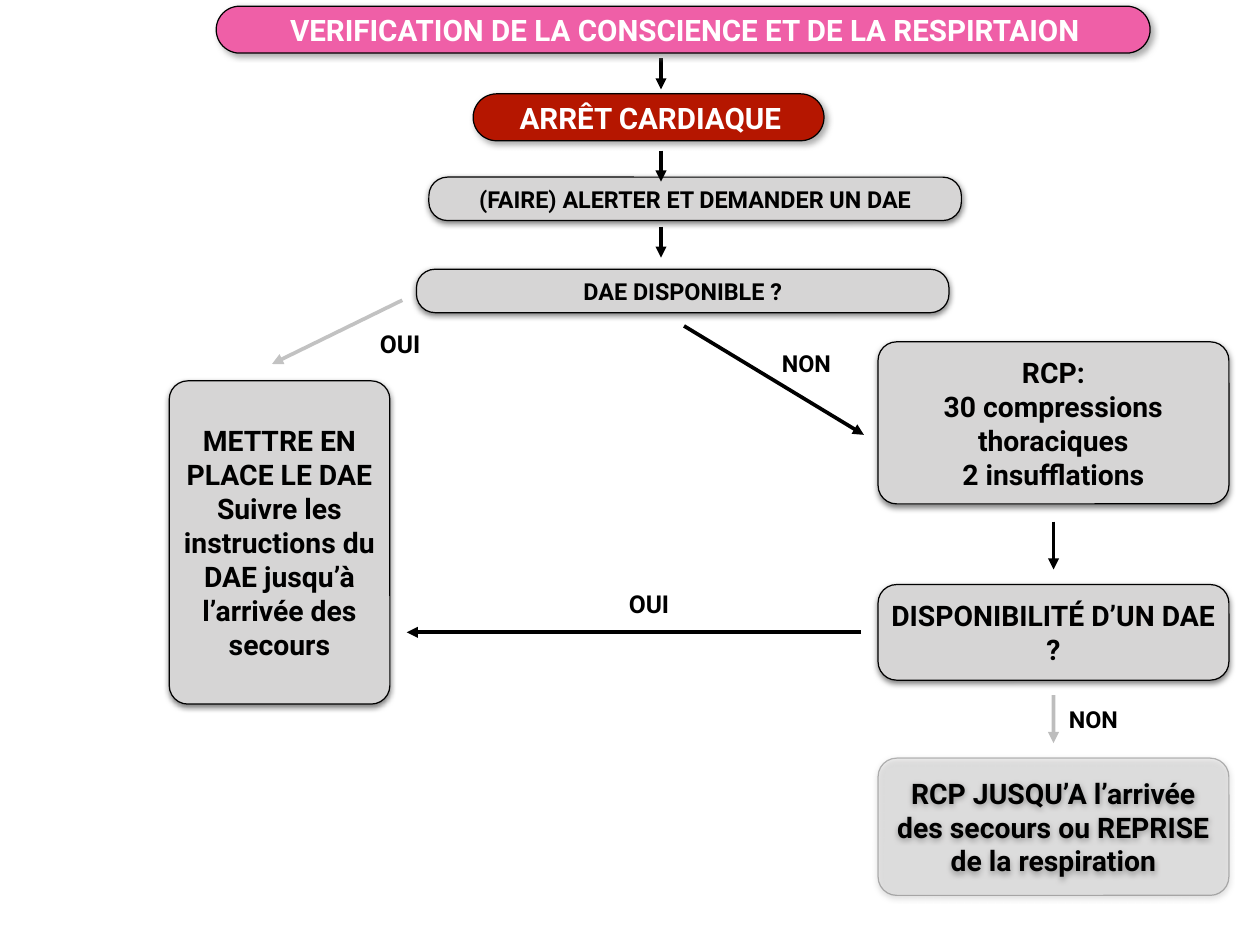
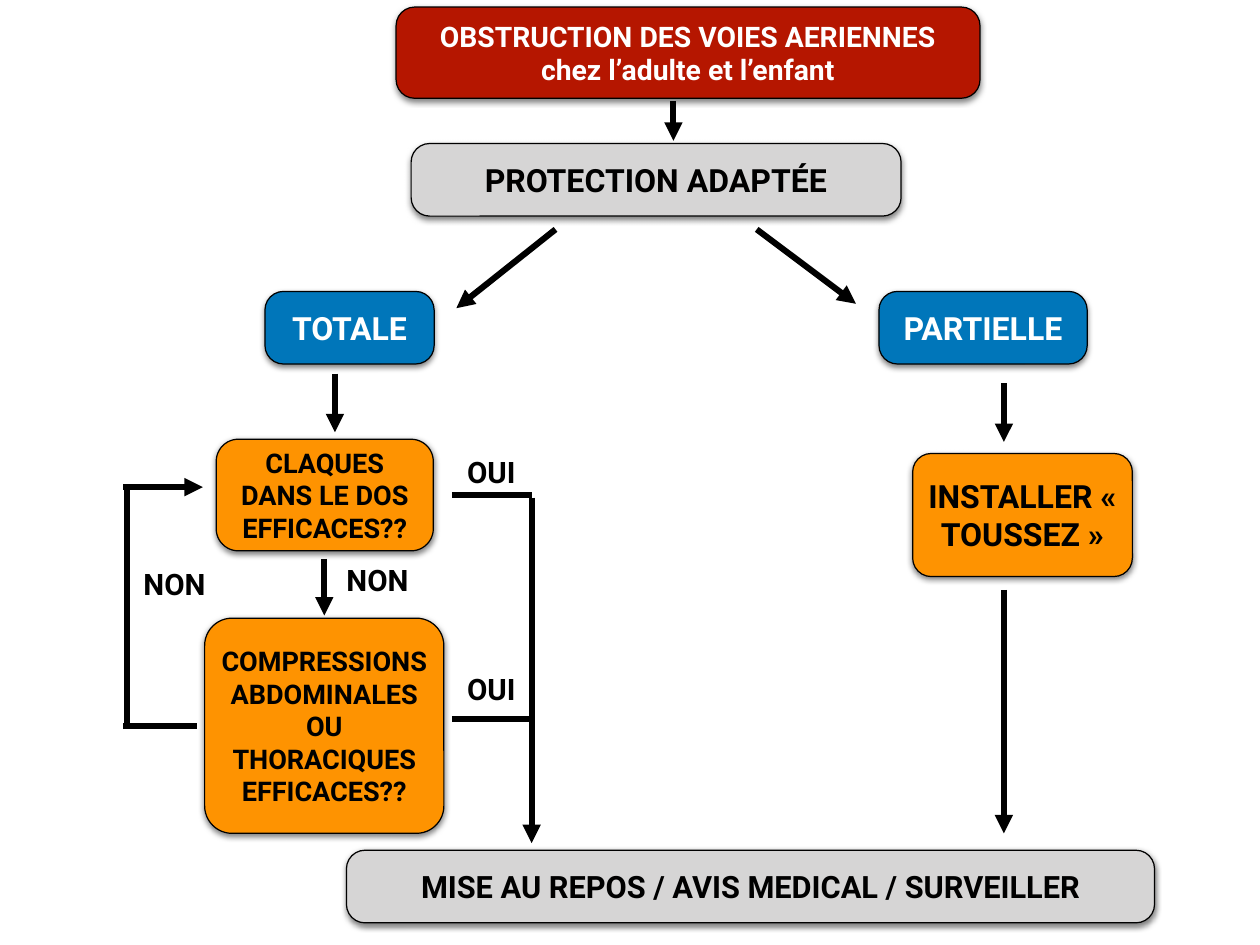
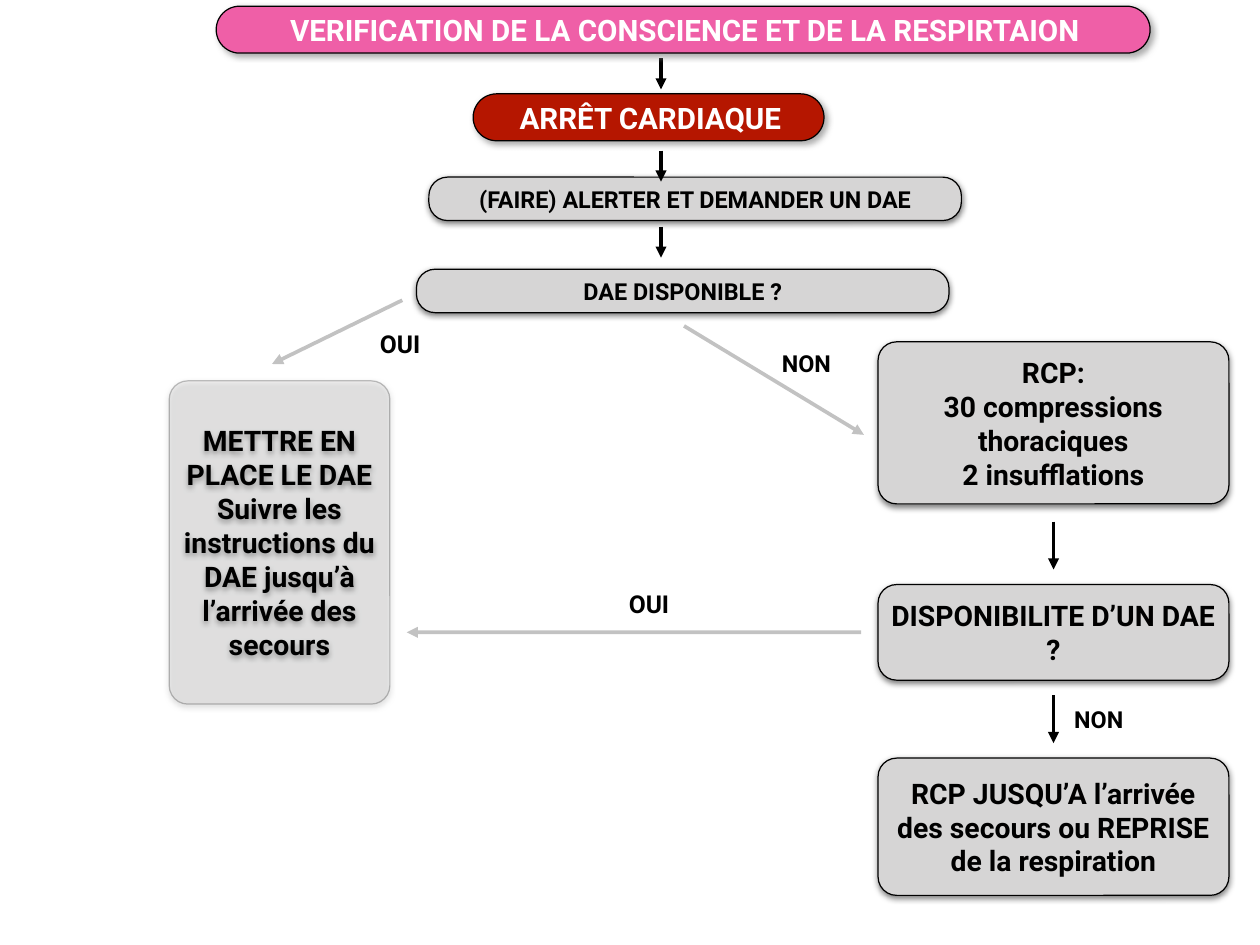
"""Build three first-aid flow charts as slides."""
from dataclasses import dataclass

import lxml.etree
import pptx
import pptx.dml.color
import pptx.enum.shapes
import pptx.enum.text
import pptx.oxml.ns
import pptx.slide
import pptx.util

Inches = pptx.util.Inches
Pt = pptx.util.Pt


@dataclass(frozen=True)
class Shade:
    color: str
    alpha: int
    dist: int
    angle: int


@dataclass(frozen=True)
class Theme:
    font: str = "Roboto"
    black: str = "000000"
    white: str = "FFFFFF"
    grey: str = "D6D5D5"
    red: str = "B51600"
    pink: str = "EF5FA7"
    blue: str = "0076BA"
    gold: str = "FE9301"
    small: int = 19
    label: int = 20
    step: int = 22
    body: int = 23
    title: int = 24
    wide: int = 25
    large: int = 26
    edge: float = 1
    thin: float = 3
    thick: float = 5
    inset: float = 0.06
    curve: float = 0.21
    blur: int = 5
    soft: Shade = Shade("000000", 50, 2, 90)
    cast: Shade = Shade("929292", 75, 3, 45)


T = Theme()


@dataclass(frozen=True)
class Box:
    x: float
    y: float
    w: float
    h: float
    text: str
    size: int = T.body
    fill: str = T.grey
    ink: str = T.black
    curve: float = T.curve
    shade: Shade = T.soft
    alpha: int = 100
    left: float = T.inset


@dataclass(frozen=True)
class Label:
    x: float
    y: float
    w: float
    h: float
    text: str
    size: int


@dataclass(frozen=True)
class Line:
    x1: float
    y1: float
    x2: float
    y2: float
    width: float = T.thin
    alpha: int = 100
    head: bool = True


Item = Box | Label | Line


def add(parent: lxml.etree._Element, tag: str, **attrs: object) -> lxml.etree._Element:
    node = lxml.etree.SubElement(parent, pptx.oxml.ns.qn(f"a:{tag}"))
    for key, value in attrs.items():
        node.set(key, str(value))
    return node


def fade(root: lxml.etree._Element, alpha: int) -> None:
    if alpha < 100:
        for color in root.iter(pptx.oxml.ns.qn("a:srgbClr")):
            add(color, "alpha", val=alpha * 1000)


def tint(fill: pptx.dml.fill.FillFormat, color: str) -> None:
    fill.solid()
    fill.fore_color.rgb = pptx.dml.color.RGBColor.from_string(color)


def write(frame: pptx.text.text.TextFrame, text: str, size: int, ink: str,
          left: float = T.inset, wrap: bool = True) -> None:
    frame.text = text
    frame.word_wrap = wrap
    frame.vertical_anchor = pptx.enum.text.MSO_ANCHOR.MIDDLE
    frame.margin_left = Inches(left)
    frame.margin_right = frame.margin_top = frame.margin_bottom = Inches(T.inset)
    for para in frame.paragraphs:
        para.alignment = pptx.enum.text.PP_ALIGN.CENTER
        para.font.name = T.font
        para.font.size = Pt(size)
        para.font.bold = True
        tint(para.font.fill, ink)


def draw_box(slide: pptx.slide.Slide, box: Box) -> None:
    shape = slide.shapes.add_shape(
        pptx.enum.shapes.MSO_SHAPE.ROUNDED_RECTANGLE,
        Inches(box.x), Inches(box.y), Inches(box.w), Inches(box.h))
    shape.adjustments[0] = min(0.5, box.curve / min(box.w, box.h))
    tint(shape.fill, box.fill)
    tint(shape.line.fill, T.black)
    shape.line.width = Pt(T.edge)
    props = shape._element.spPr
    fade(props, box.alpha)
    shape.shadow.inherit = False
    cast = add(props.find(pptx.oxml.ns.qn("a:effectLst")), "outerShdw",
               blurRad=Pt(T.blur), dist=Pt(box.shade.dist),
               dir=box.shade.angle * 60000, rotWithShape=0)
    fade_to = add(cast, "srgbClr", val=box.shade.color)
    add(fade_to, "alpha", val=box.shade.alpha * 1000)
    write(shape.text_frame, box.text, box.size, box.ink, box.left)


def draw_label(slide: pptx.slide.Slide, label: Label) -> None:
    shape = slide.shapes.add_textbox(
        Inches(label.x), Inches(label.y), Inches(label.w), Inches(label.h))
    write(shape.text_frame, label.text, label.size, T.black, wrap=False)


def draw_line(slide: pptx.slide.Slide, line: Line) -> None:
    link = slide.shapes.add_connector(
        pptx.enum.shapes.MSO_CONNECTOR.STRAIGHT,
        Inches(line.x1), Inches(line.y1), Inches(line.x2), Inches(line.y2))
    tint(link.line.fill, T.black)
    link.line.width = Pt(line.width)
    props = link._element.spPr
    fade(props, line.alpha)
    if line.head:
        add(props.find(pptx.oxml.ns.qn("a:ln")), "tailEnd", type="triangle")
    add(props, "effectLst")


def draw(slide: pptx.slide.Slide, items: list[Item]) -> None:
    tools = {Box: draw_box, Label: draw_label, Line: draw_line}
    for item in items:
        tools[type(item)](slide, item)


def pill(x: float, y: float, w: float, text: str, fill: str) -> Box:
    return Box(x, y, w, 0.53, text, T.title, fill, T.white, 0.27, T.cast, left=0.1)


def bar(x: float, y: float, text: str) -> Box:
    return Box(x, y, 6.01, 0.49, text, T.small)


def side(y: float, h: float, text: str, alpha: int = 100) -> Box:
    return Box(9.91, y, 3.96, h, text, alpha=alpha)


def down(x: float, y: float, span: float, width: float = T.thin,
         alpha: int = 100) -> Line:
    return Line(x, y, x, y + span, width, alpha)


def heart(ask: str, no_x: float, dim: dict[str, int]) -> list[Item]:
    def tone(key: str) -> int:
        return dim.get(key, 100)

    return [
        pill(5.34, 1.06, 3.96, "ARRÊT CARDIAQUE", T.red),
        bar(4.84, 2, "(FAIRE) ALERTER ET DEMANDER UN DAE"),
        bar(4.7, 3.04, "DAE DISPONIBLE ?"),
        *(down(7.46, y, 0.35) for y in (0.66, 1.7, 2.56)),
        Line(4.54, 3.39, 3.07, 4.11, alpha=tone("yes")),
        Line(7.72, 3.68, 9.75, 4.91, alpha=tone("no")),
        Label(4.2, 3.66, 0.63, 0.45, "OUI", T.label),
        Label(8.74, 3.88, 0.72, 0.44, "NON", T.small),
        pill(2.44, 0.07, 10.54,
             "VERIFICATION DE LA CONSCIENCE ET DE LA RESPIRTAION", T.pink),
        down(11.89, 5.89, 0.54),
        side(3.86, 1.83, "RCP:\n30 compressions thoraciques\n2 insufflations"),
        side(6.6, 1.08, ask),
        down(11.89, 7.85, 0.54, alpha=tone("end")),
        side(8.56, 1.55,
             "RCP JUSQU’A l’arrivée des secours ou REPRISE de la respiration",
             tone("end")),
        Line(9.72, 7.14, 4.59, 7.14, alpha=tone("back")),
        Label(7.01, 6.59, 0.63, 0.45, "OUI", T.label),
        Box(1.91, 4.3, 2.49, 3.65,
            "METTRE EN PLACE LE DAE\n"
            "Suivre les instructions du DAE jusqu’à l’arrivée des secours",
            alpha=tone("dae")),
        Label(no_x, 7.9, 0.72, 0.44, "NON", T.small),
    ]


def choke() -> list[Item]:
    def block(x: float, y: float, w: float, text: str, size: int = T.large,
              fill: str = T.grey, ink: str = T.black) -> Box:
        return Box(x, y, w, 0.82, text, size, fill, ink)

    def stroke(x1: float, y1: float, x2: float, y2: float,
               head: bool = False) -> Line:
        return Line(x1, y1, x2, y2, T.thick, head=head)

    downs = ((7.6, 1.14, 0.45), (3.66, 6.31, 0.64), (6, 5.62, 3.9),
             (11.33, 6.66, 2.75), (3.78, 4.22, 0.66), (11.33, 4.33, 0.66))
    return [
        Box(4.47, 0.08, 6.59, 1.03,
            "OBSTRUCTION DES VOIES AERIENNES chez l’adulte et l’enfant",
            fill=T.red, ink=T.white),
        block(4.64, 1.62, 5.53, "PROTECTION ADAPTÉE"),
        block(2.99, 3.29, 1.91, "TOTALE", fill=T.blue, ink=T.white),
        block(9.92, 3.29, 2.35, "PARTIELLE", fill=T.blue, ink=T.white),
        Box(2.44, 4.96, 2.45, 1.26, "CLAQUES DANS LE DOS EFFICACES??",
            T.step, T.gold, curve=0.25),
        Box(2.31, 6.98, 2.7, 2.43,
            "COMPRESSIONS ABDOMINALES OU THORACIQUES EFFICACES??",
            T.step, T.gold, curve=0.31),
        Box(10.3, 5.12, 2.48, 1.39, "INSTALLER « TOUSSEZ »", T.large, T.gold),
        block(3.91, 9.6, 9.12, "MISE AU REPOS / AVIS MEDICAL / SURVEILLER", T.wide),
        *(Label(x, y, 0.88, 0.5, "NON", T.title)
          for x, y in ((3.82, 6.3), (1.53, 6.34))),
        *(Label(5.18, y, 0.73, 0.5, "OUI", T.title) for y in (5.08, 7.53)),
        *(down(x, y, span, T.thick) for x, y, span in downs),
        *(stroke(5.1, y, 6, y) for y in (5.59, 8.12)),
        stroke(1.43, 5.48, 1.43, 8.23),
        stroke(1.39, 8.2, 2.22, 8.2),
        stroke(1.39, 5.5, 2.29, 5.5, True),
        stroke(6.27, 2.59, 5.15, 3.48, True),
        stroke(8.54, 2.59, 9.66, 3.43, True),
    ]


def main() -> None:
    deck = pptx.Presentation()
    deck.slide_width = Inches(14.22)
    deck.slide_height = Inches(10.67)
    pages = [
        heart("DISPONIBILITÉ D’UN DAE ?", 11.98, {"yes": 24, "end": 25}),
        choke(),
        heart("DISPONIBILITE D’UN DAE ?", 12.04,
              dict.fromkeys(("yes", "no", "back", "dae"), 23)),
    ]
    for items in pages:
        draw(deck.slides.add_slide(deck.slide_layouts[6]), items)
    deck.save("out.pptx")


if __name__ == "__main__":
    main()
